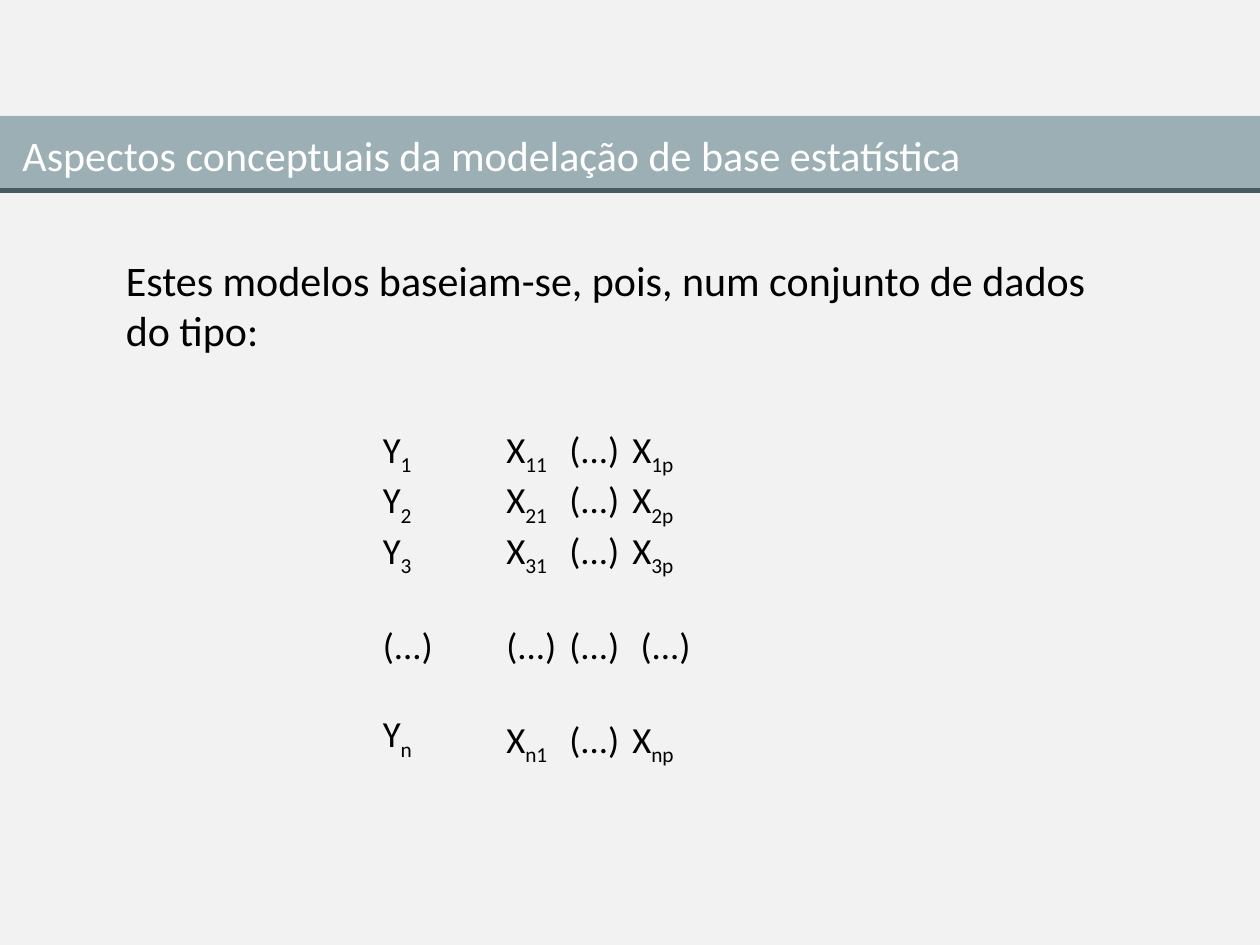
import pptx
import pptx.util
import pptx.dml.color
import pptx.enum.shapes
import pptx.oxml.ns
from lxml import etree

Inches, Pt = pptx.util.Inches, pptx.util.Pt
RGB = pptx.dml.color.RGBColor
qn = pptx.oxml.ns.qn

PAPER = RGB(0xF2, 0xF2, 0xF2)
BAND = RGB(0x9B, 0xAF, 0xB5)
RULE = RGB(0x47, 0x5B, 0x61)
WHITE = RGB(0xFF, 0xFF, 0xFF)
BLACK = RGB(0, 0, 0)


def write(para, text, size=24, color=BLACK, gap=0, tabs=()):
    """Fill a paragraph; every second part between underscores is subscript."""
    para.space_before = Pt(gap)
    if tabs:
        stops = etree.SubElement(para._p.get_or_add_pPr(), qn("a:tabLst"))
        for stop in tabs:
            etree.SubElement(stops, qn("a:tab"), pos=str(Inches(stop)), algn="l")
    for i, part in enumerate(text.split("_")):
        run = para.add_run()
        run.text = part
        run.font.name = "Calibri"
        run.font.size = Pt(size)
        run.font.color.rgb = color
        if i % 2:
            run._r.get_or_add_rPr().set("baseline", "-25000")


class Page:
    def __init__(self, deck):
        self.slide = deck.slides.add_slide(deck.slide_layouts[6])
        self.shapes = self.slide.shapes
        fill = self.slide.background.fill
        fill.solid()
        fill.fore_color.rgb = PAPER

    def text(self, box, lines, wrap=True, gaps=None, **style):
        """Add a text box; gaps maps a line number to its space before."""
        frame = self.shapes.add_textbox(*map(Inches, box)).text_frame
        frame.word_wrap = wrap
        for i, line in enumerate(lines):
            para = frame.add_paragraph() if i else frame.paragraphs[0]
            write(para, line, gap=(gaps or {}).get(i, 0), **style)

    def band(self, box, color):
        kind = pptx.enum.shapes.MSO_SHAPE.RECTANGLE
        shape = self.shapes.add_shape(kind, *map(Inches, box))
        shape.shadow.inherit = False
        shape.fill.solid()
        shape.fill.fore_color.rgb = color
        shape.line.fill.background()

    def rule(self, ends, color, width):
        kind = pptx.enum.shapes.MSO_CONNECTOR.STRAIGHT
        line = self.shapes.add_connector(kind, *map(Inches, ends))
        line.line.color.rgb = color
        line.line.width = Pt(width)
        etree.SubElement(line._element.spPr, qn("a:effectLst"))


def main():
    deck = pptx.Presentation()
    deck.slide_width, deck.slide_height = Inches(10), Inches(7.5)
    page = Page(deck)

    page.text((0.9, 1.97, 8.19, 1.31),
              ["Estes modelos baseiam-se, pois, num conjunto de dados do tipo:"])
    page.band((0, 0.92, 10, 0.59), BAND)
    page.text((0.08, 0.98, 7.69, 0.5),
              ["Aspectos conceptuais da modelação de base estatística"],
              wrap=False, color=WHITE)
    page.rule((0, 1.51, 10, 1.51), RULE, 3)

    left = [f"Y_{row}" for row in "123n"]
    right = [f"X_{row}1_\t(...)\tX_{row}p" for row in "123n"]
    left.insert(3, "(...)")
    right.insert(3, "(...)\t(...)\t (...)")
    page.text((2.94, 3.34, 0.64, 2.81), left, size=21, gaps={3: 25.6, 4: 25.6})
    page.text((3.92, 3.34, 2.2, 2.81), right, size=21,
              gaps={3: 25.6, 4: 28.6}, tabs=(0.5, 1))
    deck.save("out.pptx")


if __name__ == "__main__":
    main()
